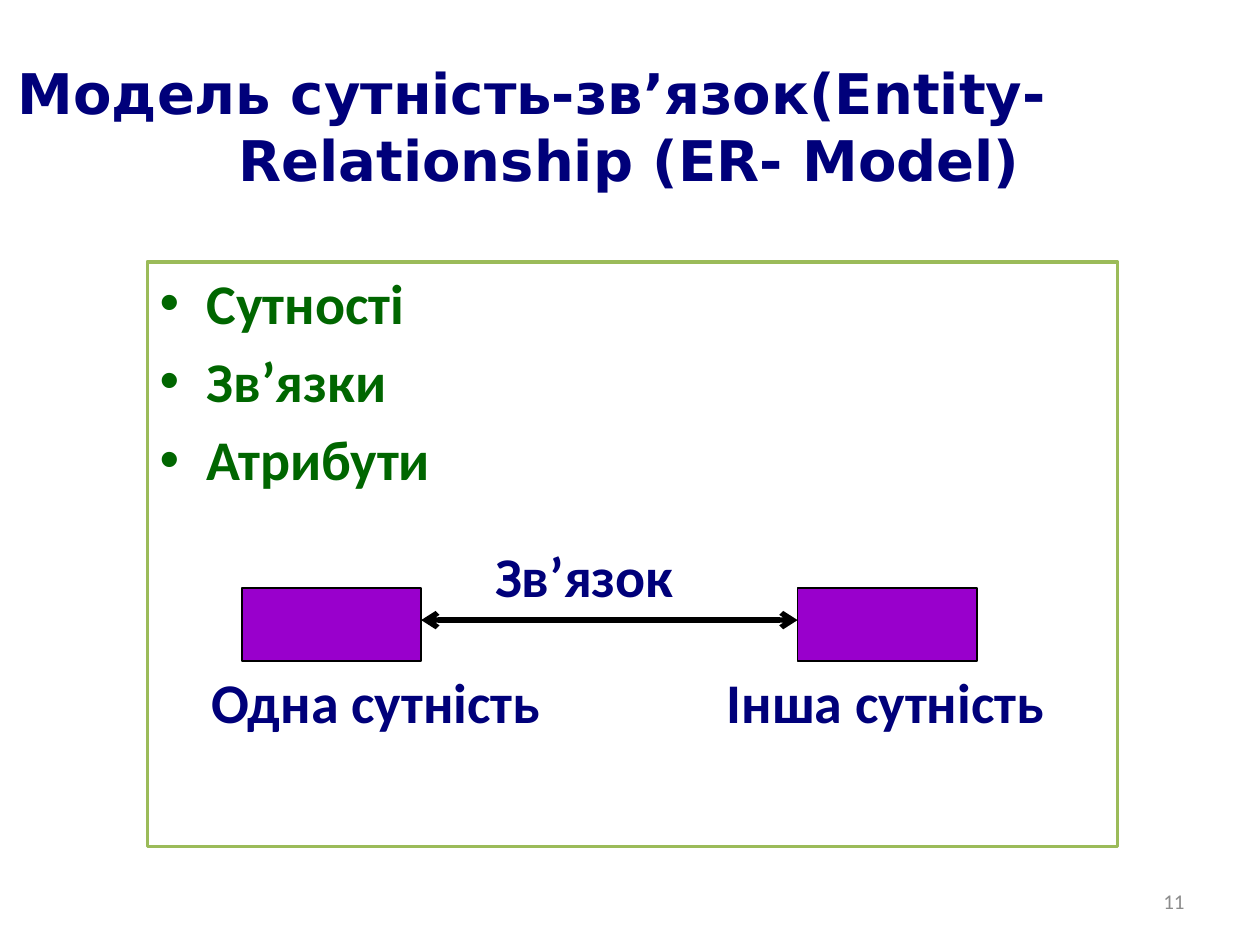
from lxml.etree import SubElement as Sub
from pptx import Presentation
from pptx.dml.color import RGBColor as Rgb
from pptx.enum.shapes import MSO_CONNECTOR as Link, MSO_SHAPE as Kind
from pptx.enum.text import MSO_ANCHOR as Anchor, MSO_AUTO_SIZE as Fit, PP_ALIGN as Align
from pptx.oxml.ns import qn
from pptx.util import Cm, Pt

HEX = {"navy": "00007A", "green": "006600", "frame": "9BBB59", "box": "9900CC",
       "black": "000000", "white": "FFFFFF", "grey": "8C8C8C"}
TITLE = "Модель сутність-зв’язок(Entity- Relationship (ER- Model)"
POINTS = ["Сутності", "Зв’язки", "Атрибути"]
# text, left, top, width, wrap (cm)
LABELS = [
    ("Зв’язок", 9.73, 10.8, 4.88, True),
    ("Одна сутність", 4.01, 13.34, 7.32, False),
    ("Інша сутність", 14.4, 13.34, 6.99, False),
]
PAGE = "11"
BOX_X, BOX_Y, BOX_W, BOX_H = (4.88, 16.08), 11.86, 3.61, 1.47
LINK_Y = 12.5


def color(name):
    return Rgb.from_string(HEX[name])


def write(par, text, size, ink, bold=True, face="Calibri"):
    run = par.add_run()
    run.text = text
    font = run.font
    font.name, font.size, font.bold = face, Pt(size), bold
    font.color.rgb = color(ink)


def hang(par, left, first):
    """Set the left margin and first-line indent in cm."""
    props = par._p.get_or_add_pPr()
    props.set("marL", str(Cm(left)))
    props.set("indent", str(Cm(first)))
    return props


def add_rect(slide, place, fill, edge, width):
    rect = slide.shapes.add_shape(Kind.RECTANGLE, *map(Cm, place))
    rect.shadow.inherit = False
    rect.fill.solid()
    rect.fill.fore_color.rgb = color(fill)
    rect.line.color.rgb = color(edge)
    rect.line.width = Pt(width)
    return rect


def add_title(slide):
    title = slide.shapes.title
    title.left, title.top, title.width, title.height = map(Cm, (0, 0.84, 24.77, 3.38))
    frame = title.text_frame
    frame.auto_size = Fit.NONE
    frame.vertical_anchor = Anchor.MIDDLE
    par = frame.paragraphs[0]
    par.alignment = Align.LEFT
    hang(par, 4.55, -4.45)
    write(par, TITLE, 32, "navy", face="DejaVu Sans")


def add_points(slide):
    frame = add_rect(slide, (2.97, 5.28, 19.56, 11.79), "white", "frame", 2).text_frame
    frame.vertical_anchor = Anchor.TOP
    for i, text in enumerate(POINTS):
        par = frame.add_paragraph() if i else frame.paragraphs[0]
        par.alignment = Align.LEFT
        props = hang(par, 0.95, -0.95)
        Sub(props, qn("a:buFont"), typeface="Arial")
        Sub(props, qn("a:buChar"), char="•")
        par.space_before = Pt(6.4 if i else 0)
        write(par, text, 32, "green")


def add_link(slide):
    ends = BOX_X[0] + BOX_W, LINK_Y, BOX_X[1], LINK_Y
    link = slide.shapes.add_connector(Link.STRAIGHT, *map(Cm, ends))
    link.line.color.rgb = color("black")
    link.line.width = Pt(3)
    line = link.line._get_or_add_ln()
    for end in ("a:headEnd", "a:tailEnd"):
        Sub(line, qn(end), type="arrow")
    Sub(link._element.spPr, qn("a:effectLst"))


def add_label(slide, text, left, top, width, wrap):
    frame = slide.shapes.add_textbox(*map(Cm, (left, top, width, 1.63))).text_frame
    frame.word_wrap = wrap
    frame.auto_size = Fit.SHAPE_TO_FIT_TEXT
    write(frame.paragraphs[0], text, 32, "navy")


def add_page(slide):
    frame = slide.shapes.add_textbox(*map(Cm, (18.2, 17.65, 5.93, 1.02))).text_frame
    frame.word_wrap = True
    frame.vertical_anchor = Anchor.MIDDLE
    par = frame.paragraphs[0]
    par.alignment = Align.RIGHT
    write(par, PAGE, 12, "grey", bold=False)


def main():
    deck = Presentation()
    deck.slide_width, deck.slide_height = Cm(25.4), Cm(19.05)
    slide = deck.slides.add_slide(deck.slide_layouts[5])
    add_page(slide)
    add_title(slide)
    add_points(slide)
    for left in BOX_X:
        add_rect(slide, (left, BOX_Y, BOX_W, BOX_H), "box", "black", 1)
    add_link(slide)
    for label in LABELS:
        add_label(slide, *label)
    deck.save("out.pptx")


if __name__ == "__main__":
    main()
